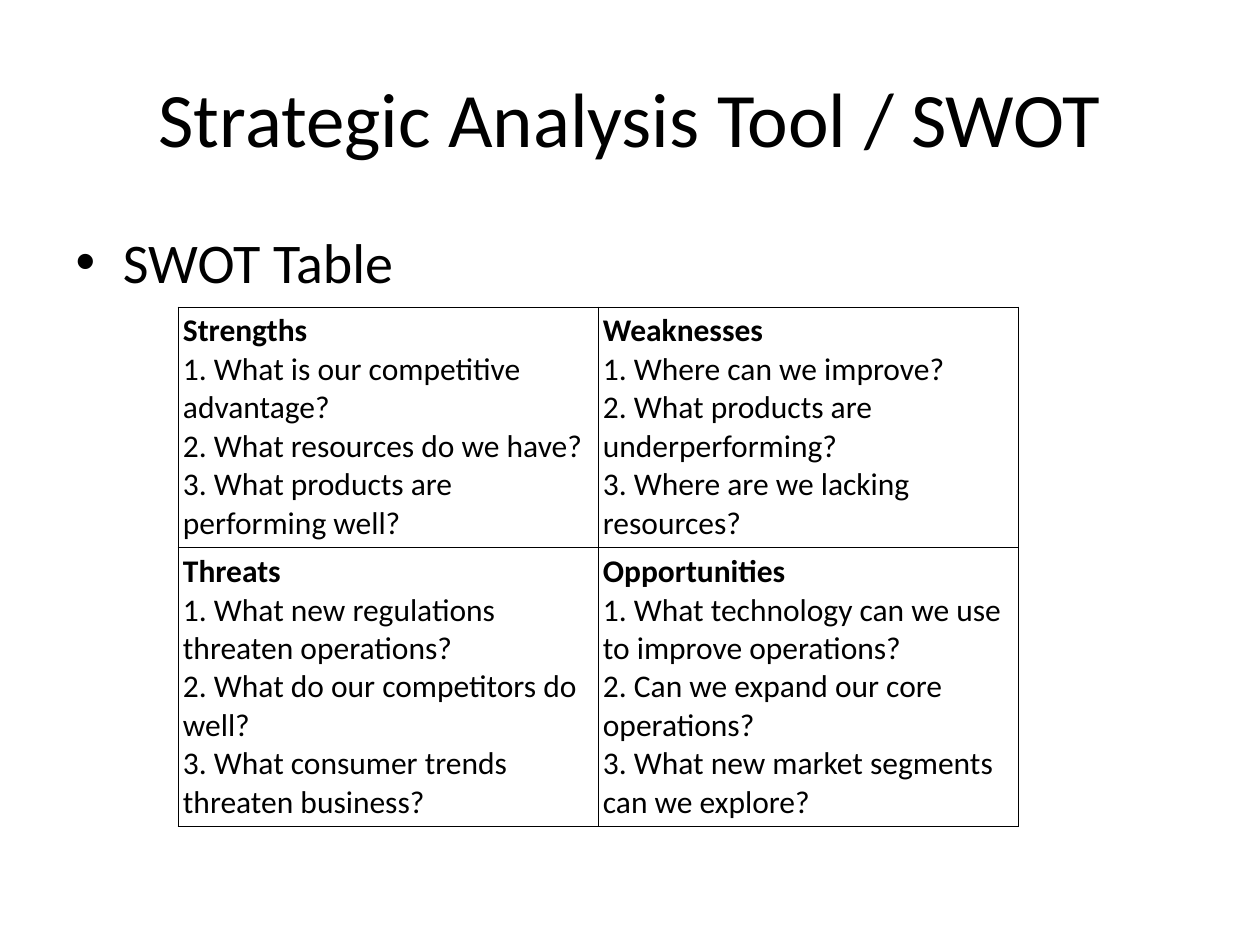
from pptx import Presentation, util as u
from pptx.dml.color import RGBColor
from pptx.enum import text
from pptx.oxml import parse_xml
from pptx.oxml.ns import nsdecls

PX = u.Inches(1) // 126
BLACK = RGBColor(0, 0, 0)
FONT = "Calibri"
EDGE = ('<a:{} {} w="6350"><a:solidFill><a:srgbClr val="{}"/></a:solidFill>'
        '<a:prstDash val="solid"/></a:{}>')


def set_font(p, size, bold=False):
    p.font.name, p.font.size, p.font.bold = FONT, u.Pt(size), bold
    p.font.color.rgb = BLACK


def place(sp, *box):
    sp.left, sp.top, sp.width, sp.height = [v * PX for v in box]


prs = Presentation()
prs.slide_width, prs.slide_height = 1260 * PX, 945 * PX
s = prs.slides.add_slide(prs.slide_layouts[1])

title, body = s.shapes.title, s.placeholders[1]
place(title, 63, 38, 1134, 158)
title.text_frame.text = "Strategic Analysis Tool / SWOT"
title.text_frame.vertical_anchor = text.MSO_ANCHOR.MIDDLE
p = title.text_frame.paragraphs[0]
p.alignment = text.PP_ALIGN.CENTER
set_font(p, 44)

place(body, 63, 221, 1134, 624)
body.text_frame.text = "SWOT Table"
p = body.text_frame.paragraphs[0]
p.space_before = u.Pt(7.7)
set_font(p, 32)

swot = [
    [["Strengths", "What is our competitive advantage?",
      "What resources do we have?", "What products are performing well?"],
     ["Weaknesses", "Where can we improve?",
      "What products are underperforming?", "Where are we lacking resources?"]],
    [["Threats", "What new regulations threaten operations?",
      "What do our competitors do well?", "What consumer trends threaten business?"],
     ["Opportunities", "What technology can we use to improve operations?",
      "Can we expand our core operations?", "What new market segments can we explore?"]],
]
row_heights = [240, 279]
table = s.shapes.add_table(2, 2, 178 * PX, 307 * PX, 840 * PX, sum(row_heights) * PX).table
table.first_row = table.horz_banding = False
for row, height, quadrants in zip(table.rows, row_heights, swot):
    row.height = height * PX
    for cell, (heading, *questions) in zip(row.cells, quadrants):
        cell.margin_left = cell.margin_right = cell.margin_top = cell.margin_bottom = 5 * PX
        lines = [heading] + [f"{n}. {q}" for n, q in enumerate(questions, 1)]
        cell.text_frame.text = "\n".join(lines)
        for i, p in enumerate(cell.text_frame.paragraphs):
            set_font(p, 18, bold=i == 0)
        tcPr = cell._tc.get_or_add_tcPr()
        for side in ("lnL", "lnR", "lnT", "lnB"):
            tcPr.append(parse_xml(EDGE.format(side, nsdecls("a"), BLACK, side)))
        cell.fill.background()

prs.save("out.pptx")
